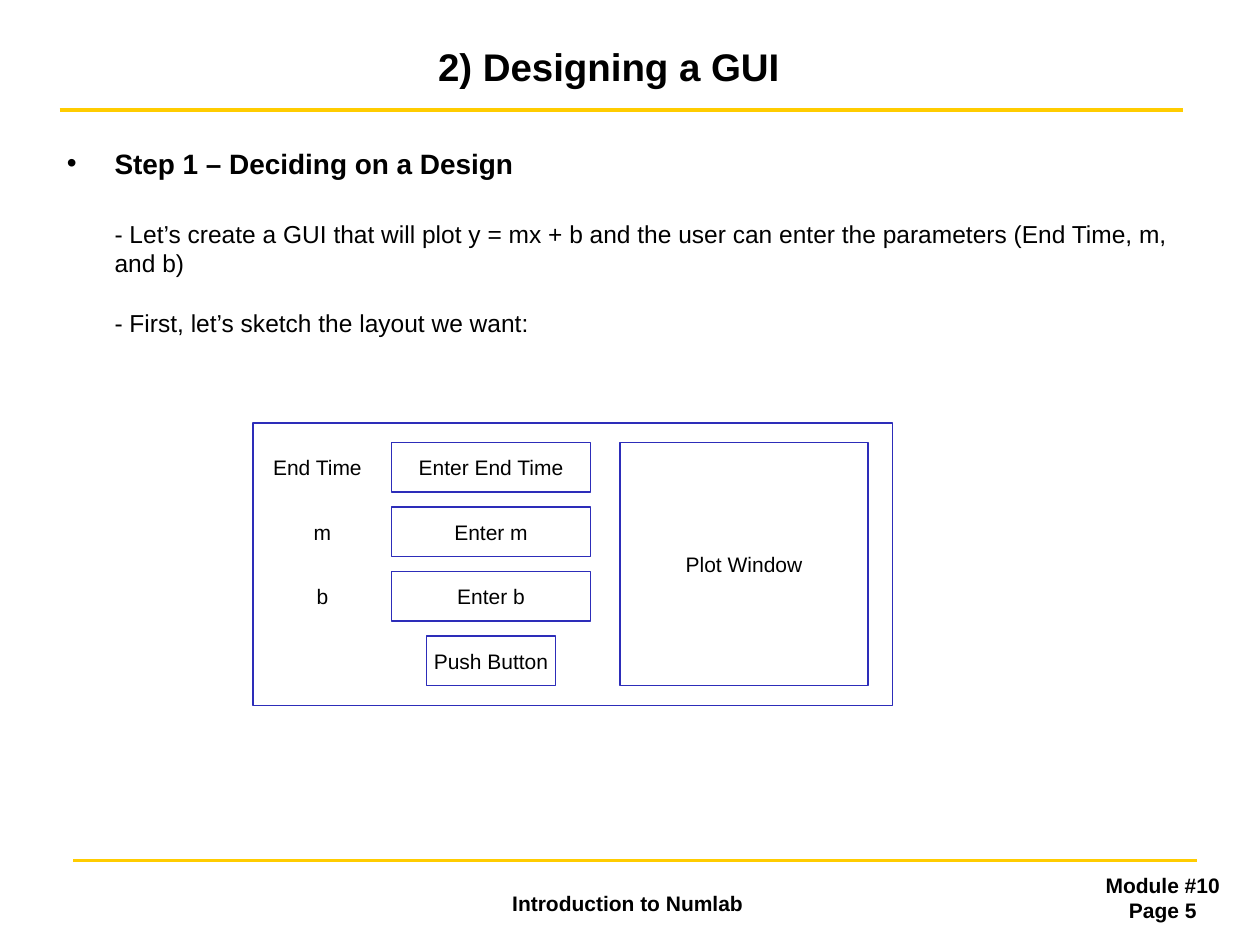
from dataclasses import dataclass

from lxml import etree
from pptx import Presentation, util as u
from pptx.dml.color import RGBColor
from pptx.enum import shapes, text
from pptx.oxml.ns import qn
from pptx.slide import Slide
from pptx.text.text import TextFrame


@dataclass(frozen=True)
class Theme:
    font: str = "Arial"
    ink: RGBColor = RGBColor(0, 0, 0)
    rule: RGBColor = RGBColor(0xFF, 0xCC, 0x00)
    outline: RGBColor = RGBColor(0x2D, 0x2D, 0xB9)
    title: int = 22
    heading: int = 16
    body: int = 14
    small: int = 12


@dataclass(frozen=True)
class Box:
    left: float
    top: float
    width: float
    height: float

    def lengths(self) -> tuple:
        return tuple(u.Cm(n) for n in (self.left, self.top, self.width, self.height))


@dataclass(frozen=True)
class Line:
    words: str
    size: int
    bold: bool = False
    centred: bool = True
    before: float = 0
    bullet: bool = False


@dataclass(frozen=True)
class InputRow:
    label: str
    label_left: float
    prompt: str


THEME = Theme()
ROW_TOP, ROW_PITCH, ROW_HEIGHT = 8.92, 1.3, 1.0
LABEL_WIDTH, FIELD_LEFT, FIELD_WIDTH = 2.6, 7.9, 4.0
HANGING = 0.96
ROWS = (
    InputRow("End Time", 5.1, "Enter End Time"),
    InputRow("m", 5.2, "Enter m"),
    InputRow("b", 5.2, "Enter b"),
)


def write(frame: TextFrame, lines: list[Line], middle: bool, wrap: bool) -> None:
    frame.word_wrap = wrap
    frame.vertical_anchor = text.MSO_ANCHOR.MIDDLE if middle else text.MSO_ANCHOR.TOP
    for index, line in enumerate(lines):
        paragraph = frame.add_paragraph() if index else frame.paragraphs[0]
        paragraph.alignment = text.PP_ALIGN.CENTER if line.centred else text.PP_ALIGN.LEFT
        if line.before:
            paragraph.space_before = u.Pt(line.before)
        if not line.centred:
            properties = paragraph._p.get_or_add_pPr()
            properties.set("marL", str(u.Cm(HANGING)))
            properties.set("indent", str(-u.Cm(HANGING) if line.bullet else 0))
            if line.bullet:
                etree.SubElement(properties, qn("a:buFont")).set("typeface", THEME.font)
                etree.SubElement(properties, qn("a:buChar")).set("char", "•")
        run = paragraph.add_run()
        run.text = line.words
        run.font.name = THEME.font
        run.font.size = u.Pt(line.size)
        run.font.bold = line.bold
        run.font.color.rgb = THEME.ink


def add_text(slide: Slide, box: Box, lines: list[Line],
             middle: bool = False, wrap: bool = True) -> None:
    shape = slide.shapes.add_textbox(*box.lengths())
    write(shape.text_frame, lines, middle, wrap)


def add_panel(slide: Slide, box: Box, words: str = "") -> None:
    shape = slide.shapes.add_shape(shapes.MSO_SHAPE.RECTANGLE, *box.lengths())
    shape.shadow.inherit = False
    shape.fill.background()
    shape.line.color.rgb = THEME.outline
    shape.line.width = u.Pt(0.75)
    if words:
        write(shape.text_frame, [Line(words, THEME.small)], middle=True, wrap=False)


def add_rule(slide: Slide, left: float, top: float, width: float) -> None:
    rule = slide.shapes.add_connector(
        shapes.MSO_CONNECTOR.STRAIGHT, u.Cm(left), u.Cm(top), u.Cm(left + width), u.Cm(top))
    rule.line.color.rgb = THEME.rule
    rule.line.width = u.Pt(2)
    etree.SubElement(rule._element.spPr, qn("a:effectLst"))


def add_sketch(slide: Slide) -> None:
    add_panel(slide, Box(5.1, 8.53, 12.9, 5.69))
    add_panel(slide, Box(12.5, ROW_TOP, 5.0, 3 * ROW_PITCH + ROW_HEIGHT), "Plot Window")
    for index, row in enumerate(ROWS):
        top = ROW_TOP + index * ROW_PITCH
        add_text(slide, Box(row.label_left, top, LABEL_WIDTH, ROW_HEIGHT),
                 [Line(row.label, THEME.small)], middle=True, wrap=False)
        add_panel(slide, Box(FIELD_LEFT, top, FIELD_WIDTH, ROW_HEIGHT), row.prompt)
    button_top = ROW_TOP + len(ROWS) * ROW_PITCH
    add_panel(slide, Box(8.6, button_top, 2.6, ROW_HEIGHT), "Push Button")


def main() -> None:
    presentation = Presentation()
    presentation.slide_width, presentation.slide_height = u.Cm(25.4), u.Cm(19.05)
    slide = presentation.slides.add_slide(presentation.slide_layouts[6])

    add_rule(slide, 1.2, 2.22, 22.65)
    add_rule(slide, 1.48, 17.35, 22.65)
    add_text(slide, Box(6.71, 17.83, 11.89, 1.27),
             [Line("Introduction to Numlab", THEME.small, bold=True)])
    add_text(slide, Box(22.02, 17.47, 2.84, 1.27),
             [Line("Module #10", THEME.small, bold=True),
              Line("Page 5", THEME.small, bold=True)], wrap=False)
    add_text(slide, Box(1.48, 0.64, 21.59, 1.4),
             [Line("2) Designing a GUI", THEME.title, bold=True)], middle=True)
    add_text(slide, Box(1.1, 2.82, 23.5, 14.1), [
        Line("Step 1 – Deciding on a Design", THEME.heading,
             bold=True, centred=False, bullet=True),
        Line("- Let’s create a GUI that will plot y = mx + b and the user can enter "
             "the parameters (End Time, m, and b)", THEME.body, centred=False, before=22.5),
        Line("- First, let’s sketch the layout we want:", THEME.body,
             centred=False, before=17),
    ])
    add_sketch(slide)
    presentation.save("out.pptx")


if __name__ == "__main__":
    main()
